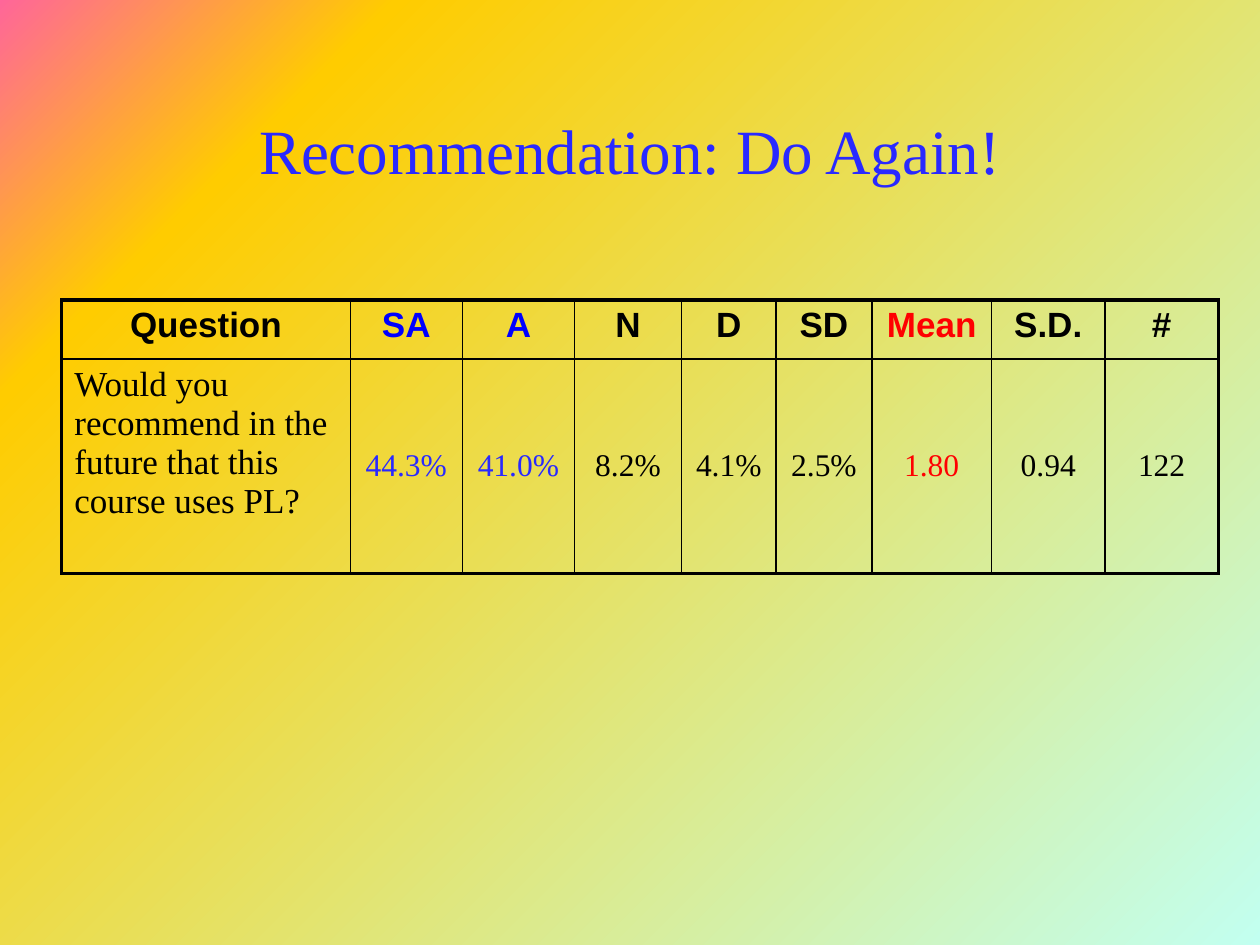
from copy import deepcopy
from typing import NamedTuple

from pptx import Presentation
from pptx.dml.color import RGBColor
from pptx.enum.text import MSO_ANCHOR, PP_ALIGN
from pptx.oxml import parse_xml
from pptx.oxml.ns import nsdecls, qn
from pptx.util import Inches, Pt

LEFT, CENTER = PP_ALIGN.LEFT, PP_ALIGN.CENTER
TOP, MIDDLE = MSO_ANCHOR.TOP, MSO_ANCHOR.MIDDLE
SERIF, SANS = "Times New Roman", "Arial"
BLACK, RED, BLUE, VIOLET = "000000", "FF0000", "0000FF", "2929FF"
THIN, THICK = 1, 2.25


class Column(NamedTuple):
    width: float
    head: str
    value: str
    head_color: str = BLACK
    color: str = BLACK


class Style(NamedTuple):
    size: float
    font: str
    bold: bool = False
    align: PP_ALIGN = CENTER
    anchor: MSO_ANCHOR = MIDDLE


COLUMNS = [
    Column(2.29, "Question",
           "Would you recommend in the future that this course uses PL?"),
    Column(0.89, "SA", "44.3%", BLUE, VIOLET),
    Column(0.89, "A", "41.0%", BLUE, VIOLET),
    Column(0.85, "N", "8.2%"),
    Column(0.75, "D", "4.1%"),
    Column(0.76, "SD", "2.5%"),
    Column(0.95, "Mean", "1.80", RED, RED),
    Column(0.9, "S.D.", "0.94"),
    Column(0.9, "#", "122"),
]
ROWS = [0.47, 1.7]
STOPS = [(0, "FF6699"), (0.18, "FFCC00"), (1, "C2FFF0")]
HEAD = Style(20, SANS, bold=True, anchor=TOP)
ASK = Style(20, SERIF, align=LEFT, anchor=TOP)
VALUE = Style(18, SERIF)


def rgb(code: str) -> RGBColor:
    return RGBColor.from_string(code)


def set_text(frame, text: str, style: Style, color: str) -> None:
    frame.text = text
    frame.word_wrap = True
    para = frame.paragraphs[0]
    para.alignment = style.align
    font = para.runs[0].font
    font.size, font.name, font.bold = Pt(style.size), style.font, style.bold
    font.color.rgb = rgb(color)


def set_edge(cell, side: str, width: float) -> None:
    cell._tc.get_or_add_tcPr().append(parse_xml(
        f'<a:ln{side} {nsdecls("a")} w="{Pt(width)}"><a:solidFill>'
        f'<a:srgbClr val="{BLACK}"/></a:solidFill></a:ln{side}>'))


def draw_cell(table, row: int, col: int) -> None:
    cell, item = table.cell(row, col), COLUMNS[col]
    # Thick lines on the outside of the grid, thin ones within
    outer = {"L": col == 0, "R": col == len(COLUMNS) - 1,
             "T": row == 0, "B": row == len(ROWS) - 1}
    for side, thick in outer.items():
        set_edge(cell, side, THICK if thick else THIN)
    cell.fill.background()
    if row == 0:
        text, style, color = item.head, HEAD, item.head_color
    else:
        text, style, color = item.value, VALUE if col else ASK, item.color
    if style is VALUE:
        cell.margin_left = cell.margin_right = Inches(0.07)
        cell.margin_top = cell.margin_bottom = 0
    cell.vertical_anchor = style.anchor
    set_text(cell.text_frame, text, style, color)


def draw_back(slide) -> None:
    fill = slide.background.fill
    fill.gradient()
    fill.gradient_angle = 315
    stops = next(slide.element.iter(qn("a:gsLst")))
    stops.append(deepcopy(stops[0]))
    for stop, (place, color) in zip(fill.gradient_stops, STOPS):
        stop.position = place
        stop.color.rgb = rgb(color)


def draw_title(slide) -> None:
    title = slide.shapes.title
    title.left, title.top = Inches(0.75), Inches(0.67)
    title.width, title.height = Inches(8.5), Inches(1.03)
    title.text_frame.vertical_anchor = MIDDLE
    set_text(title.text_frame, "Recommendation: Do Again!",
             Style(36, SERIF), VIOLET)


def draw_table(slide) -> None:
    width = sum(item.width for item in COLUMNS)
    table = slide.shapes.add_table(
        len(ROWS), len(COLUMNS), Inches(0.49), Inches(2.38),
        Inches(width), Inches(sum(ROWS))).table
    table.first_row = table.horz_banding = False
    for col, item in enumerate(COLUMNS):
        table.columns[col].width = Inches(item.width)
    for row, height in enumerate(ROWS):
        table.rows[row].height = Inches(height)
        for col in range(len(COLUMNS)):
            draw_cell(table, row, col)


def main() -> None:
    deck = Presentation()
    deck.slide_width, deck.slide_height = Inches(10), Inches(7.5)
    slide = deck.slides.add_slide(deck.slide_layouts[5])
    draw_back(slide)
    draw_title(slide)
    draw_table(slide)
    deck.save("out.pptx")


if __name__ == "__main__":
    main()
